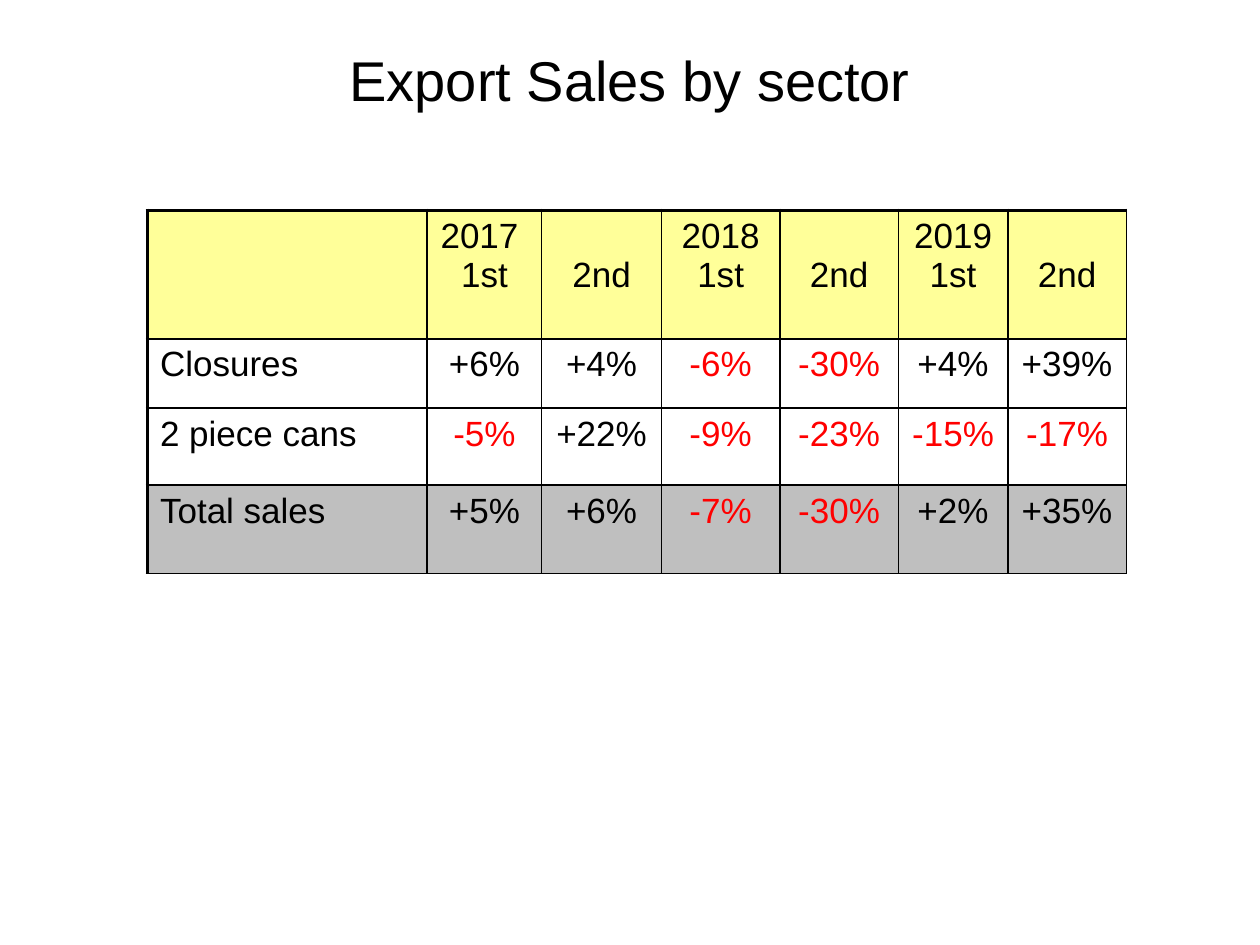
from lxml import etree
from pptx import Presentation
from pptx.dml.color import RGBColor
from pptx.enum.text import MSO_ANCHOR, PP_ALIGN
from pptx.oxml.ns import qn
from pptx.util import Inches, Pt

CENTER, LEFT = PP_ALIGN.CENTER, PP_ALIGN.LEFT
MIDDLE = MSO_ANCHOR.MIDDLE
TITLE_ONLY = 5

FONT = "Arial"
BLACK, RED, YELLOW, GREY = "000000", "FF0000", "FFFF99", "BFBFBF"
THIN, THICK = 1, 2.25
TEXT_SIZE = 20
CELL_TOP, SECOND_LINE_TOP = 0.05, 0.36

COLUMN_WIDTHS = [2.22, 0.91, 0.95, 0.94, 0.94, 0.87, 0.94]
ROW_HEIGHTS = [1.02, 0.55, 0.61, 0.7]
ROW_FILLS = [YELLOW, None, None, GREY]
SALES = [
    ["", "2017 \n1st", "2nd", "2018\n1st", "2nd", "2019 1st", "2nd"],
    ["Closures", "+6%", "+4%", "-6%", "-30%", "+4%", "+39%"],
    ["2 piece cans", "-5%", "+22%", "-9%", "-23%", "-15%", "-17%"],
    ["Total sales", "+5%", "+6%", "-7%", "-30%", "+2%", "+35%"],
]


def rgb(value):
    return RGBColor.from_string(value)


def write_text(frame, text, size, color=BLACK, align=CENTER):
    frame.text = text
    for para in frame.paragraphs:
        para.alignment = align
        para.font.size = Pt(size)
        for span in para.runs:
            span.font.name = FONT
            span.font.size = Pt(size)
            span.font.color.rgb = rgb(color)


def add_title(page, text):
    title = page.shapes.title
    title.left, title.top = Inches(0.5), 0
    title.width, title.height = Inches(9), Inches(1.25)
    title.text_frame.vertical_anchor = MIDDLE
    write_text(title.text_frame, text, 32)


def set_borders(cell, widths):
    """Draw black borders; widths maps L, R, T and B to points."""
    properties = cell._tc.get_or_add_tcPr()
    for index, (side, width) in enumerate(widths.items()):
        line = etree.Element(qn(f"a:ln{side}"), w=str(Pt(width)))
        fill = etree.SubElement(line, qn("a:solidFill"))
        etree.SubElement(fill, qn("a:srgbClr"), val=BLACK)
        properties.insert(index, line)


def format_cell(cell, text, row, column):
    is_header, is_label = row == 0, column == 0
    color = RED if text.startswith("-") else BLACK
    write_text(cell.text_frame, text, TEXT_SIZE, color, LEFT if is_label else CENTER)
    cell.margin_left = cell.margin_right = Inches(0.1)
    cell.margin_top = Inches(SECOND_LINE_TOP if text == "2nd" else CELL_TOP)
    cell.margin_bottom = Inches(0.05)
    if ROW_FILLS[row]:
        cell.fill.solid()
        cell.fill.fore_color.rgb = rgb(ROW_FILLS[row])
    else:
        cell.fill.background()
    set_borders(cell, {
        "L": THICK if is_label else THIN,
        "R": THIN,
        "T": THICK if is_header else THIN,
        "B": THIN,
    })


def add_sales_table(page):
    frame = page.shapes.add_table(
        len(SALES), len(COLUMN_WIDTHS), Inches(1.17), Inches(1.67),
        Inches(sum(COLUMN_WIDTHS)), Inches(sum(ROW_HEIGHTS)))
    table = frame.table
    table.first_row = table.horz_banding = False
    for column, width in zip(table.columns, COLUMN_WIDTHS):
        column.width = Inches(width)
    for row, height in zip(table.rows, ROW_HEIGHTS):
        row.height = Inches(height)
    for row, texts in enumerate(SALES):
        for column, text in enumerate(texts):
            format_cell(table.cell(row, column), text, row, column)


def main():
    deck = Presentation()
    deck.slide_width, deck.slide_height = Inches(10), Inches(7.5)
    page = deck.slides.add_slide(deck.slide_layouts[TITLE_ONLY])
    add_title(page, "Export Sales by sector")
    add_sales_table(page)
    deck.save("out.pptx")


if __name__ == "__main__":
    main()
